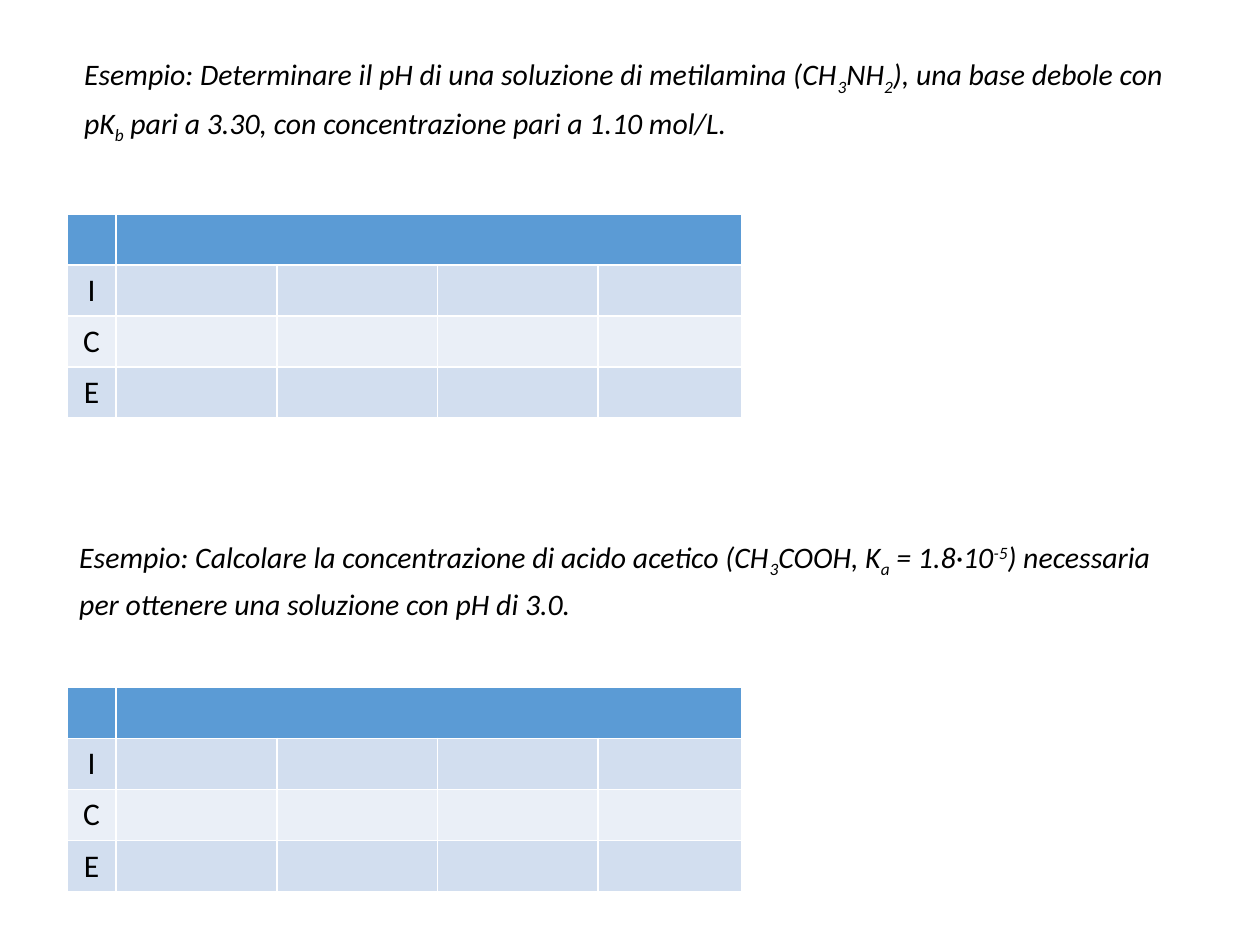
from pptx import Presentation
from pptx.dml.color import RGBColor
from pptx.enum.text import MSO_ANCHOR as Anchor, PP_ALIGN as Align
from pptx.util import Pt

BLACK = RGBColor(0x00, 0x00, 0x00)
HEADER_BLUE = RGBColor(0x5B, 0x9B, 0xD5)
BAND_DARK = RGBColor(0xD2, 0xDE, 0xEF)
BAND_LIGHT = RGBColor(0xEA, 0xEF, 0xF7)
ROW_FILLS = [HEADER_BLUE, BAND_DARK, BAND_LIGHT, BAND_DARK]
ROW_LABELS = ["", "I", "C", "E"]
COLUMN_WIDTHS = [28.2, 91.8, 91.8, 91.8, 82.2]
ROW_HEIGHT = 29.2
TABLE_LEFT = 38.2
SUBSCRIPT, SUPERSCRIPT = -25000, 30000

METHYLAMINE = [
    ("Esempio: Determinare il pH di una soluzione di metilamina (CH", 0),
    ("3", SUBSCRIPT), ("NH", 0), ("2", SUBSCRIPT),
    ("), una base debole con pK", 0), ("b", SUBSCRIPT),
    (" pari a 3.30, con concentrazione pari a 1.10 mol/L.", 0),
]
ACETIC_ACID = [
    ("Esempio: Calcolare la concentrazione di acido acetico (CH", 0),
    ("3", SUBSCRIPT), ("COOH, K", 0), ("a", SUBSCRIPT),
    (" = 1.8·10", 0), ("-5", SUPERSCRIPT),
    (") necessaria per ottenere una soluzione con pH di 3.0.", 0),
]


def set_font(paragraph, size, italic=False):
    font = paragraph.font
    font.name = "Calibri"
    font.size = Pt(size)
    font.italic = italic
    font.color.rgb = BLACK


def add_exercise(slide, left, top, segments):
    shape = slide.shapes.add_textbox(Pt(left), Pt(top), Pt(640), Pt(53.3))
    shape.text_frame.word_wrap = True
    paragraph = shape.text_frame.paragraphs[0]
    paragraph.line_spacing = 1.2
    set_font(paragraph, 17, italic=True)
    for text, baseline in segments:
        run = paragraph.add_run()
        run.text = text
        if baseline:
            run._r.get_or_add_rPr().set("baseline", str(baseline))


def add_ice_table(slide, top):
    table = slide.shapes.add_table(
        len(ROW_LABELS), len(COLUMN_WIDTHS), Pt(TABLE_LEFT), Pt(top),
        Pt(sum(COLUMN_WIDTHS)), Pt(ROW_HEIGHT * len(ROW_LABELS))).table
    for column, width in zip(table.columns, COLUMN_WIDTHS):
        column.width = Pt(width)
    for row, label, color in zip(table.rows, ROW_LABELS, ROW_FILLS):
        row.height = Pt(ROW_HEIGHT)
        for cell in row.cells:
            cell.fill.solid()
            cell.fill.fore_color.rgb = color
        if label:
            label_cell = row.cells[0]
            label_cell.text = label
            label_cell.vertical_anchor = Anchor.MIDDLE
            paragraph = label_cell.text_frame.paragraphs[0]
            paragraph.alignment = Align.CENTER
            set_font(paragraph, 18)
    table.cell(0, 1).merge(table.cell(0, len(COLUMN_WIDTHS) - 1))


def main():
    presentation = Presentation()
    presentation.slide_width = Pt(720)
    presentation.slide_height = Pt(540)
    slide = presentation.slides.add_slide(presentation.slide_layouts[6])
    add_ice_table(slide, 392.8)
    add_ice_table(slide, 122.2)
    add_exercise(slide, 41, 23.8, METHYLAMINE)
    add_exercise(slide, 38.2, 299.5, ACETIC_ACID)
    presentation.save("out.pptx")


if __name__ == "__main__":
    main()
